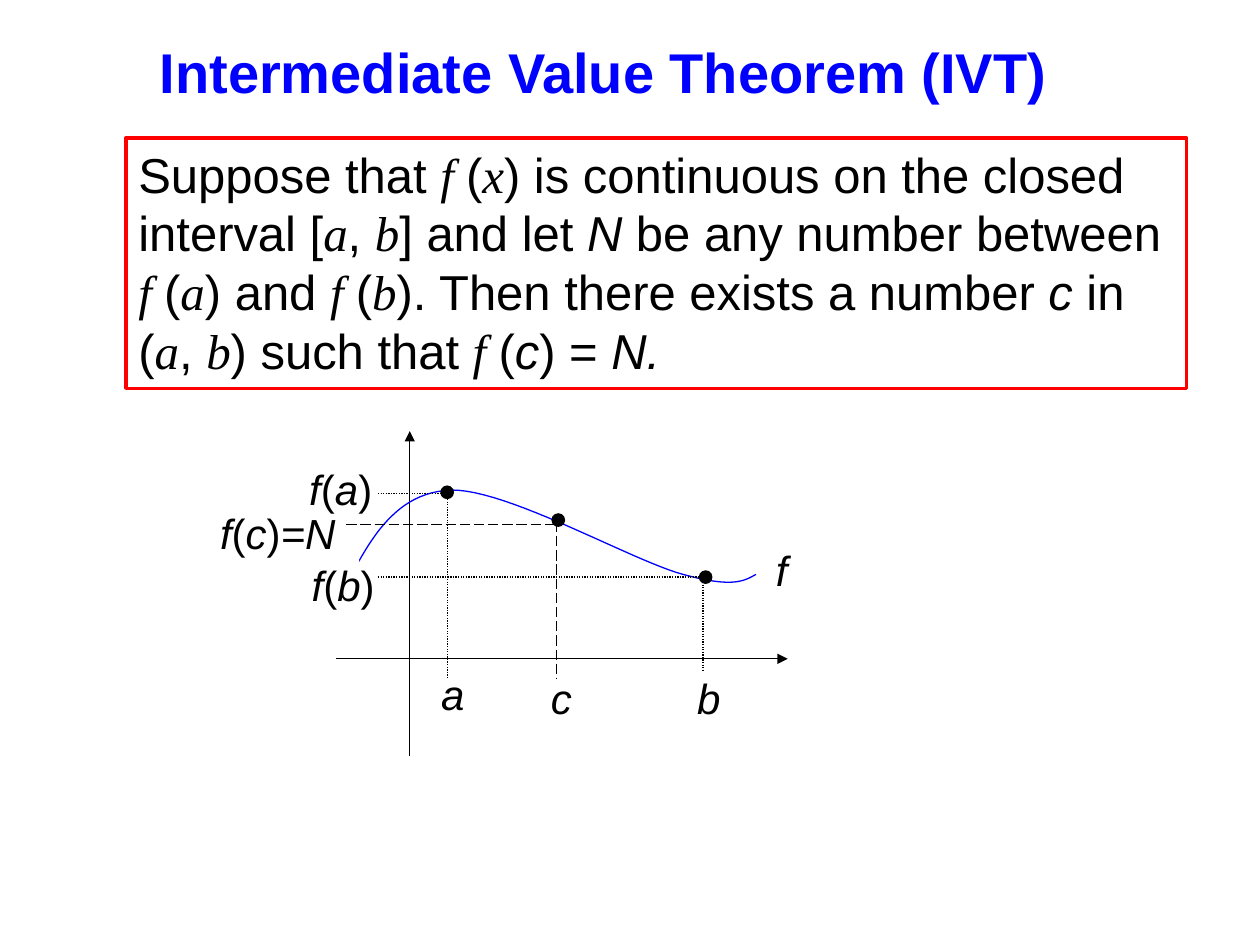
from lxml.etree import SubElement
from pptx import Presentation
from pptx.dml.color import RGBColor
from pptx.enum.dml import MSO_LINE
from pptx.enum.shapes import MSO_CONNECTOR, MSO_SHAPE
from pptx.enum.text import MSO_ANCHOR, MSO_AUTO_SIZE, PP_ALIGN
from pptx.oxml.ns import qn
from pptx.util import Cm, Pt

BLACK = RGBColor(0x00, 0x00, 0x00)
WHITE = RGBColor(0xFF, 0xFF, 0xFF)
BLUE = RGBColor(0x00, 0x00, 0xFF)
RED = RGBColor(0xFF, 0x00, 0x00)

PLAIN = ("Arial", False)
ITALIC = ("Arial", True)
MATH = ("Times New Roman", True)

THEOREM = [
    ("Suppose that ", PLAIN), ("f ", MATH), ("(", PLAIN), ("x", MATH),
    (") is continuous on the closed interval [", PLAIN), ("a", MATH),
    (", ", PLAIN), ("b", MATH), ("] and let ", PLAIN), ("N", ITALIC),
    (" be any number between ", PLAIN), ("f ", MATH), ("(", PLAIN),
    ("a", MATH), (") and ", PLAIN), ("f ", MATH), ("(", PLAIN), ("b", MATH),
    ("). Then there exists a number ", PLAIN), ("c", ITALIC),
    (" in (", PLAIN), ("a", MATH), (", ", PLAIN), ("b", MATH),
    (") such that ", PLAIN), ("f ", MATH), ("(", PLAIN), ("c", ITALIC),
    (") = ", PLAIN), ("N.", ITALIC),
]

CURVE_START = (1.7, 3.1)
CURVE_SEGMENTS = [
    ((2.19, 2.16), (2.7, 1.24), (3.81, 1.19)),
    ((4.96, 1.17), (7.45, 2.61), (8.49, 2.89)),
    ((9.5, 3.17), (9.73, 3.02), (9.96, 2.89)),
]
CURVE_STEPS = 24
DOT_SIZE = 0.25
LABEL_WIDTH, LABEL_HEIGHT = 0.64, 1.07


def add_runs(paragraph, runs, size, color, bold=False):
    """Append styled runs to a paragraph."""
    for text, (font_name, italic) in runs:
        run = paragraph.add_run()
        run.text = text
        run.font.name = font_name
        run.font.italic = italic
        run.font.bold = bold
        run.font.size = Pt(size)
        run.font.color.rgb = color


def add_shape(slide, kind, left, top, width, height, fill=None, line=None, line_width=0.75):
    """Add a preset shape with the given fill and line, or without them."""
    shape = slide.shapes.add_shape(kind, Cm(left), Cm(top), Cm(width), Cm(height))
    shape.shadow.inherit = False
    if fill is None:
        shape.fill.background()
    else:
        shape.fill.solid()
        shape.fill.fore_color.rgb = fill
    if line is None:
        shape.line.fill.background()
    else:
        shape.line.color.rgb = line
        shape.line.width = Pt(line_width)
    return shape


def add_line(slide, start, end, dash=None, arrow=None):
    """Draw a thin black line, with an arrowhead at its head or tail end if asked."""
    connector = slide.shapes.add_connector(
        MSO_CONNECTOR.STRAIGHT, *(Cm(value) for value in (*start, *end)))
    connector.line.color.rgb = BLACK
    connector.line.width = Pt(0.75)
    if dash:
        connector.line.dash_style = dash
    if arrow:
        SubElement(connector.line._get_or_add_ln(), qn(f"a:{arrow}End"), type="triangle")
    SubElement(connector._element.spPr, qn("a:effectLst"))


def add_label(slide, left, top, runs, fill=None):
    """Write a centred graph label, on a filled ground if a colour is given."""
    label = add_shape(slide, MSO_SHAPE.RECTANGLE, left, top,
                      LABEL_WIDTH, LABEL_HEIGHT, fill)
    frame = label.text_frame
    frame.word_wrap = False
    frame.vertical_anchor = MSO_ANCHOR.MIDDLE
    paragraph = frame.paragraphs[0]
    paragraph.alignment = PP_ALIGN.CENTER
    add_runs(paragraph, runs, 24, BLACK)


def value_label(argument):
    """Return the runs of f(argument)."""
    return [("f", ITALIC), ("(", PLAIN), (argument, ITALIC), (")", PLAIN)]


def curve_points(start, segments):
    """Return points along a chain of cubic Bezier segments."""
    points = [start]
    for first, second, end in segments:
        for step in range(1, CURVE_STEPS + 1):
            t = step / CURVE_STEPS
            weights = ((1 - t) ** 3, 3 * t * (1 - t) ** 2, 3 * t * t * (1 - t), t ** 3)
            controls = (start, first, second, end)
            points.append(tuple(
                sum(weight * control[axis] for weight, control in zip(weights, controls))
                for axis in (0, 1)))
        start = end
    return points


def add_title(slide, left, top, width, height):
    """Place the slide title."""
    title = slide.shapes.add_textbox(Cm(left), Cm(top), Cm(width), Cm(height))
    title.text_frame.word_wrap = False
    title.text_frame.auto_size = MSO_AUTO_SIZE.SHAPE_TO_FIT_TEXT
    add_runs(title.text_frame.paragraphs[0],
             [("Intermediate Value Theorem (IVT)", PLAIN)], 32, BLUE, bold=True)


def add_theorem(slide, left, top, width, height):
    """Place the framed statement of the theorem."""
    box = add_shape(slide, MSO_SHAPE.RECTANGLE, left, top, width, height, WHITE, RED, 2)
    frame = box.text_frame
    frame.word_wrap = True
    frame.auto_size = MSO_AUTO_SIZE.SHAPE_TO_FIT_TEXT
    frame.vertical_anchor = MSO_ANCHOR.TOP
    paragraph = frame.paragraphs[0]
    paragraph.alignment = PP_ALIGN.LEFT
    add_runs(paragraph, THEOREM, 28, BLACK)


def add_graph(slide, left, top, height):
    """Draw the axes, the curve, its guide lines, points and labels."""
    def place(x, y):
        return left + x, top + y

    add_line(slide, place(2.98, 0), place(2.98, height), arrow="head")
    add_line(slide, place(1.5, 4.59), place(10.6, 4.59), arrow="tail")

    points = [tuple(Cm(value) for value in place(*point))
              for point in curve_points(CURVE_START, CURVE_SEGMENTS)]
    builder = slide.shapes.build_freeform(*points[0])
    builder.add_line_segments(points[1:], close=False)
    curve = builder.convert_to_shape()
    curve.shadow.inherit = False
    curve.fill.background()
    curve.line.color.rgb = BLUE
    curve.line.width = Pt(0.75)

    dotted, dashed = MSO_LINE.ROUND_DOT, MSO_LINE.LONG_DASH
    for start, end, dash in [
        ((3.74, 1.37), (3.74, 4.98), dotted),
        ((2.34, 1.26), (3.61, 1.26), dotted),
        ((8.89, 2.94), (8.89, 4.85), dotted),
        ((2.34, 2.94), (8.89, 2.94), dotted),
        ((5.94, 1.83), (5.94, 5), dashed),
        ((1.7, 1.89), (5.94, 1.89), dashed),
    ]:
        add_line(slide, place(*start), place(*end), dash=dash)

    for x, y in [(3.61, 1.11), (5.85, 1.67), (8.82, 2.82)]:
        add_shape(slide, MSO_SHAPE.OVAL, *place(x, y), DOT_SIZE, DOT_SIZE, BLACK, BLACK)

    for x, y, runs, fill in [
        (3.53, 4.75, [("a", ITALIC)], None),
        (5.72, 4.85, [("c", ITALIC)], None),
        (8.69, 4.85, [("b", ITALIC)], None),
        (10.16, 2.26, [("f", ITALIC)], None),
        (1.27, 0.63, value_label("a"), None),
        (1.32, 2.56, value_label("b"), WHITE),
        (0, 1.52, value_label("c") + [("=N", ITALIC)], WHITE),
    ]:
        add_label(slide, *place(x, y), runs, fill)


def main():
    """Build the slide and save it."""
    presentation = Presentation()
    presentation.slide_width = Cm(25.4)
    presentation.slide_height = Cm(19.05)
    slide = presentation.slides.add_slide(presentation.slide_layouts[6])
    add_theorem(slide, 2.54, 2.78, 21.38, 5.05)
    add_graph(slide, 5.28, 8.69, 6.55)
    add_title(slide, 2.97, 0.64, 18.54, 1.63)
    presentation.save("out.pptx")


if __name__ == "__main__":
    main()
